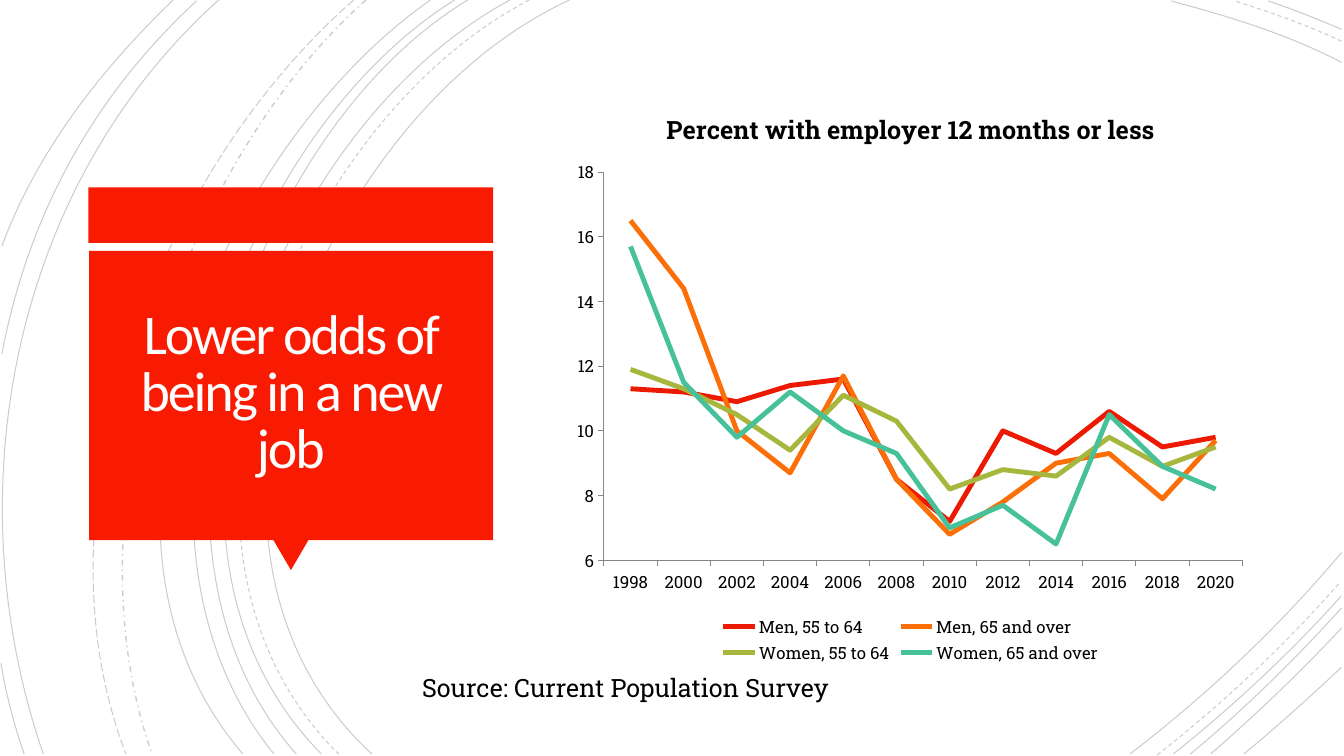
"""Build the slide on the odds of older workers being in a new job."""
import dataclasses

import lxml.etree
import pptx
import pptx.chart.data
import pptx.dml.color
import pptx.enum.chart
import pptx.enum.dml
import pptx.enum.shapes
import pptx.enum.text
import pptx.oxml.ns
import pptx.util

Pt = pptx.util.Pt
qn = pptx.oxml.ns.qn
DASH = pptx.enum.dml.MSO_LINE
SHAPE = pptx.enum.shapes.MSO_SHAPE
BLACK, RED, GREY = "000000", "F81B02", "868686"
HEADING_FONT, BODY_FONT = "Calibri", "Roboto Slab"
PLOT_LAYOUT = {"layoutTarget": "inner", "xMode": "edge", "yMode": "edge",
               "x": "0.057", "y": "0.144", "w": "0.922", "h": "0.671"}


@dataclasses.dataclass
class Arc:
    """A cubic curve: start, two controls and end, in points."""
    points: tuple
    dash: DASH = DASH.SOLID
    width: float = 0.75


@dataclasses.dataclass
class Panel:
    """A filled shape of the title callout."""
    kind: SHAPE
    left: float
    top: float
    width: float
    height: float
    rotation: float = 0


@dataclasses.dataclass
class Group:
    """One line of the chart."""
    name: str
    color: str
    values: tuple


ARCS = [
    Arc(((406.8, 0), (226.8, 82.8), (103, 388.8), (265.7, 538.6))),
    Arc(((958.3, 44.6), (920.2, 24.5), (877, 11.5), (836.6, 0.7))),
    Arc(((807.1, 538.6), (861.8, 496.8), (913.7, 447.8), (958.3, 394.6))),
    Arc(((378, 0), (205.2, 90), (88.6, 386.6), (241.9, 538.6)), DASH.DASH),
    Arc(((958.3, 29.5), (933.8, 18), (907.2, 8.6), (882, 0.7)), DASH.DASH),
    Arc(((826.6, 539.3), (873.4, 502.6), (918, 460.8), (957.6, 415.4)), DASH.DASH),
    Arc(((364.3, 0), (194.4, 91.4), (79.2, 386.6), (229.7, 538.6))),
    Arc(((958.3, 20.9), (941, 13.7), (923.8, 6.5), (905.8, 0.7))),
    Arc(((838.1, 538.6), (880.6, 504.7), (921.6, 466.6), (958.3, 425.5))),
    Arc(((334.1, 0), (175.7, 95.8), (79.2, 389.5), (211.7, 538.6))),
    Arc(((850.3, 538.6), (888.5, 506.9), (924.5, 471.6), (958.3, 434.2))),
    Arc(((324.7, 0), (166.3, 99.4), (69.8, 383.8), (195.8, 538.6))),
    Arc(((864.7, 538.6), (897.1, 510.5), (928.8, 480.2), (958.3, 448.6))),
    Arc(((307.4, 0), (156.2, 105.8), (38.2, 380.9), (173.5, 538.6))),
    Arc(((888.5, 538.6), (912.2, 519.1), (935.3, 498.2), (958.3, 476.6))),
    Arc(((261.4, 0), (126.7, 119.5), (46.8, 366.5), (108.7, 538.6)), DASH.DASH_DOT, 1),
    Arc(((252.7, 0), (113, 121.7), (20.9, 359.3), (90, 538.6)), DASH.LONG_DASH),
    Arc(((156.2, 0), (7.9, 133.2), (-33.1, 352.8), (31, 538.6))),
    Arc(((140.4, 0.7), (66.2, 69.1), (20.2, 154.1), (1.4, 252.7))),
    Arc(((0.7, 473.8), (4.3, 496.1), (10.1, 517.7), (17.3, 538.6))),
    Arc(((123.8, 0), (72, 49.7), (26.6, 108), (1.4, 175.7))),
]
PANELS = [
    Panel(SHAPE.RECTANGLE, 63.1, 133.9, 289.2, 39.6),
    Panel(SHAPE.ISOSCELES_TRIANGLE, 195.2, 385.6, 25.2, 21.6, 180),
    Panel(SHAPE.RECTANGLE, 63.6, 179.3, 288.7, 206.6),
]
YEARS = [str(year) for year in range(1998, 2021, 2)]
GROUPS = [
    Group("Men, 55 to 64", RED,
          (11.3, 11.2, 10.9, 11.4, 11.6, 8.5, 7.2, 10, 9.3, 10.6, 9.5, 9.8)),
    Group("Men, 65 and over", "FC7715",
          (16.5, 14.4, 10, 8.7, 11.7, 8.5, 6.8, 7.8, 9, 9.3, 7.9, 9.7)),
    Group("Women, 55 to 64", "AFBF41",
          (11.9, 11.3, 10.5, 9.4, 11.1, 10.3, 8.2, 8.8, 8.6, 9.8, 8.9, 9.5)),
    Group("Women, 65 and over", "50C49F",
          (15.7, 11.5, 9.8, 11.2, 10, 9.3, 7, 7.7, 6.5, 10.5, 8.9, 8.2)),
]


def rgb(color: str) -> pptx.dml.color.RGBColor:
    """Return the colour of a hex string."""
    return pptx.dml.color.RGBColor.from_string(color)


def set_font(font, name: str, size: float, color: str, bold: bool = False) -> None:
    """Set the face, size, colour and weight of a font."""
    font.name, font.size, font.bold = name, Pt(size), bold
    font.color.rgb = rgb(color)


def draw_arc(page, arc: Arc) -> None:
    """Draw a faint background curve."""
    start, *others = [(Pt(x), Pt(y)) for x, y in arc.points]
    builder = page.shapes.build_freeform(*start)
    builder.add_line_segments(others, close=False)
    curve = builder.convert_to_shape()
    segments = list(curve._element.iter(qn("a:lnTo")))
    bezier = lxml.etree.SubElement(segments[0].getparent(), qn("a:cubicBezTo"))
    for segment in segments:
        bezier.append(segment[0])
        segment.getparent().remove(segment)
    curve.shadow.inherit = False
    curve.fill.background()
    curve.line.width = Pt(arc.width)
    curve.line.dash_style = arc.dash
    curve.line.color.rgb = rgb(BLACK)
    tint = next(curve._element.iter(qn("a:srgbClr")))
    lxml.etree.SubElement(tint, qn("a:alpha"), val="20000")


def draw_panel(page, panel: Panel) -> None:
    """Draw one part of the red callout."""
    shape = page.shapes.add_shape(panel.kind, Pt(panel.left), Pt(panel.top),
                                  Pt(panel.width), Pt(panel.height))
    shape.rotation = panel.rotation
    shape.shadow.inherit = False
    shape.fill.solid()
    shape.fill.fore_color.rgb = rgb(RED)
    shape.line.fill.background()


def draw_title(page) -> None:
    """Write the title in the callout."""
    box = page.shapes.add_textbox(Pt(69.8), Pt(185), Pt(275.8), Pt(193.7))
    frame = box.text_frame
    frame.word_wrap = True
    frame.vertical_anchor = pptx.enum.text.MSO_ANCHOR.MIDDLE
    frame.margin_left = frame.margin_right = Pt(18)
    frame.margin_top = frame.margin_bottom = Pt(18)
    para = frame.paragraphs[0]
    para.alignment = pptx.enum.text.PP_ALIGN.CENTER
    para.line_spacing = 0.85
    span = para.add_run()
    span.text = "Lower odds of being in a new job"
    set_font(para.font, HEADING_FONT, 40, "FFFEFF")
    span.font._element.set("spc", "-150")


def draw_source(page) -> None:
    """Write the source line."""
    box = page.shapes.add_textbox(Pt(294.5), Pt(476.6), Pt(308.2), Pt(28.8))
    box.text_frame.word_wrap = True
    box.text_frame.auto_size = pptx.enum.text.MSO_AUTO_SIZE.SHAPE_TO_FIT_TEXT
    para = box.text_frame.paragraphs[0]
    para.text = "Source: Current Population Survey"
    set_font(para.font, BODY_FONT, 18, BLACK)


def place_plot(chart) -> None:
    """Fix the place of the plot inside the chart."""
    area = next(chart._chartSpace.iter(qn("c:plotArea")))
    for old in area.findall(qn("c:layout")):
        area.remove(old)
    layout = lxml.etree.Element(qn("c:layout"))
    area.insert(0, layout)
    manual = lxml.etree.SubElement(layout, qn("c:manualLayout"))
    for name, value in PLOT_LAYOUT.items():
        lxml.etree.SubElement(manual, qn("c:" + name), val=value)


def draw_chart(page) -> None:
    """Draw the line chart of the four groups."""
    data = pptx.chart.data.CategoryChartData(number_format="General")
    data.categories = YEARS
    for group in GROUPS:
        data.add_series(group.name, group.values)
    chart = page.shapes.add_chart(pptx.enum.chart.XL_CHART_TYPE.LINE, Pt(403.2), Pt(63.4),
                                  Pt(494.6), Pt(413.3), data).chart
    set_font(chart.font, BODY_FONT, 10, BLACK)
    title = chart.chart_title.text_frame.paragraphs[0]
    title.text = "Percent with employer 12 months or less"
    set_font(title.font, BODY_FONT, 18, BLACK, bold=True)
    chart.has_legend = True
    chart.legend.position = pptx.enum.chart.XL_LEGEND_POSITION.BOTTOM
    chart.legend.include_in_layout = False
    set_font(chart.legend.font, BODY_FONT, 12, BLACK)
    for axis in (chart.category_axis, chart.value_axis):
        axis.has_major_gridlines = False
        axis.major_tick_mark = pptx.enum.chart.XL_TICK_MARK.OUTSIDE
        axis.format.line.color.rgb = rgb(GREY)
        set_font(axis.tick_labels.font, BODY_FONT, 12, BLACK)
    chart.value_axis.minimum_scale = 6
    chart.plots[0].vary_by_categories = False
    for series, group in zip(chart.plots[0].series, GROUPS):
        series.smooth = False
        series.format.line.width = Pt(3.5)
        series.format.line.color.rgb = rgb(group.color)
        series.format.line.color.brightness = -0.05
    place_plot(chart)


def main() -> None:
    """Build the deck and save it."""
    deck = pptx.Presentation()
    deck.slide_width, deck.slide_height = Pt(960), Pt(540)
    page = deck.slides.add_slide(deck.slide_layouts[6])
    for arc in ARCS:
        draw_arc(page, arc)
    for panel in PANELS:
        draw_panel(page, panel)
    draw_title(page)
    draw_source(page)
    draw_chart(page)
    deck.save("out.pptx")


if __name__ == "__main__":
    main()
